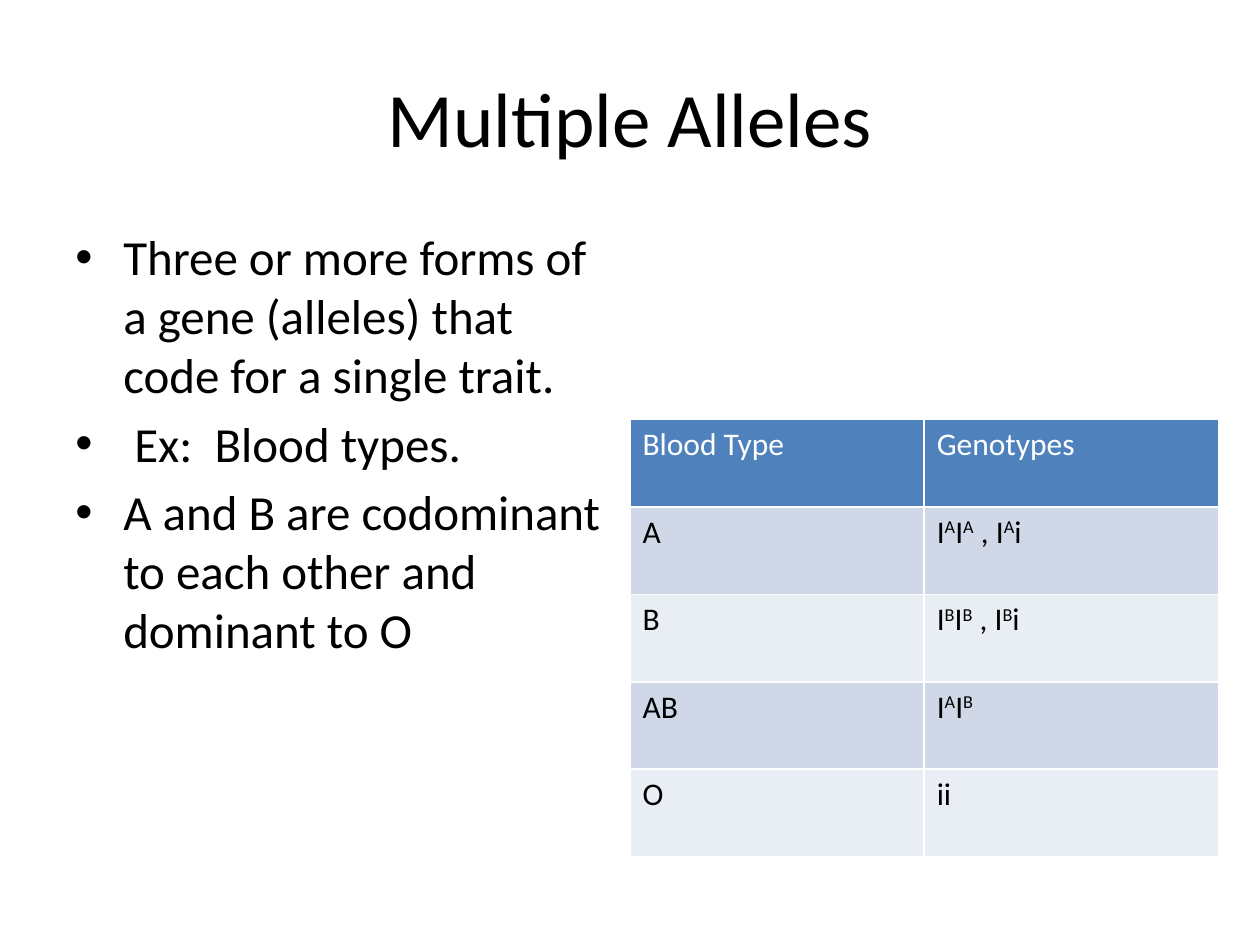
from lxml import etree
from pptx import Presentation
from pptx.dml.color import RGBColor
from pptx.enum.text import MSO_ANCHOR, PP_ALIGN
from pptx.oxml.ns import qn
from pptx.util import Inches, Pt

BLACK = RGBColor(0x00, 0x00, 0x00)
WHITE = RGBColor(0xFF, 0xFF, 0xFF)
HEADER_BLUE = RGBColor(0x4F, 0x81, 0xBD)
BAND_DARK = RGBColor(0xD0, 0xD8, 0xE8)
BAND_LIGHT = RGBColor(0xE9, 0xED, 0xF4)

TITLE = "Multiple Alleles"
POINTS = [
    "Three or more forms of a gene (alleles) that code for a single trait.",
    " Ex:  Blood types.",
    "A and B are codominant to each other and dominant to O",
]
BLOOD_TYPES = [
    ("Blood Type", "Genotypes"),
    ("A", "I^A^I^A^ , I^A^i"),
    ("B", "I^B^I^B^ , I^B^i"),
    ("AB", "I^A^I^B^"),
    ("O", "ii"),
]


def write(paragraph, text, size=18, color=BLACK, font="Calibri", align=PP_ALIGN.LEFT):
    """Fill a paragraph; text between a pair of ^ marks is superscript."""
    paragraph.alignment = align
    for index, part in enumerate(text.split("^")):
        if not part:
            continue
        run = paragraph.add_run()
        run.text = part
        run.font.name = font
        run.font.size = Pt(size)
        run.font.color.rgb = color
        if index % 2:
            run._r.get_or_add_rPr().set("baseline", "30000")


def add_bullet(paragraph, indent):
    properties = paragraph._p.get_or_add_pPr()
    properties.set("marL", str(indent))
    properties.set("indent", str(-indent))
    etree.SubElement(properties, qn("a:buFont")).set("typeface", "Arial")
    etree.SubElement(properties, qn("a:buChar")).set("char", "•")


class LessonSlide:
    def __init__(self, presentation):
        self.title_size = 44
        self.body_size = 28
        self.table_size = 18
        self.slide = presentation.slides.add_slide(presentation.slide_layouts[5])

    def title(self, text, left, top, width, height):
        heading = self.slide.shapes.title
        heading.left, heading.top = Inches(left), Inches(top)
        heading.width, heading.height = Inches(width), Inches(height)
        heading.text_frame.vertical_anchor = MSO_ANCHOR.MIDDLE
        write(heading.text_frame.paragraphs[0], text,
              size=self.title_size, align=PP_ALIGN.CENTER)

    def bullets(self, points, left, top, width, height):
        body = self.slide.shapes.add_textbox(
            Inches(left), Inches(top), Inches(width), Inches(height)).text_frame
        body.word_wrap = True
        for index, point in enumerate(points):
            paragraph = body.add_paragraph() if index else body.paragraphs[0]
            paragraph.space_before = Pt(self.body_size * 0.2)
            add_bullet(paragraph, Inches(0.38))
            write(paragraph, point, size=self.body_size)

    def table(self, rows, left, top, width, height):
        """Add a table with a header row; the default style draws its white borders."""
        grid = self.slide.shapes.add_table(
            len(rows), len(rows[0]),
            Inches(left), Inches(top), Inches(width), Inches(height)).table
        for row_index, row in enumerate(rows):
            band = BAND_DARK if row_index % 2 else BAND_LIGHT
            is_header = row_index == 0
            for column_index, text in enumerate(row):
                cell = grid.cell(row_index, column_index)
                cell.fill.solid()
                cell.fill.fore_color.rgb = HEADER_BLUE if is_header else band
                paragraph = cell.text_frame.paragraphs[0]
                paragraph.font.bold = False
                write(paragraph, text, size=self.table_size,
                      color=WHITE if is_header else BLACK)
                for run in paragraph.runs:
                    run.font.bold = False


def main():
    presentation = Presentation()
    presentation.slide_width, presentation.slide_height = Inches(10), Inches(7.5)
    lesson = LessonSlide(presentation)
    lesson.title(TITLE, 0.5, 0.3, 9, 1.25)
    lesson.bullets(POINTS, 0.5, 1.75, 4.42, 4.95)
    lesson.table(BLOOD_TYPES, 5, 3.33, 4.67, 3.47)
    presentation.save("out.pptx")


if __name__ == "__main__":
    main()
